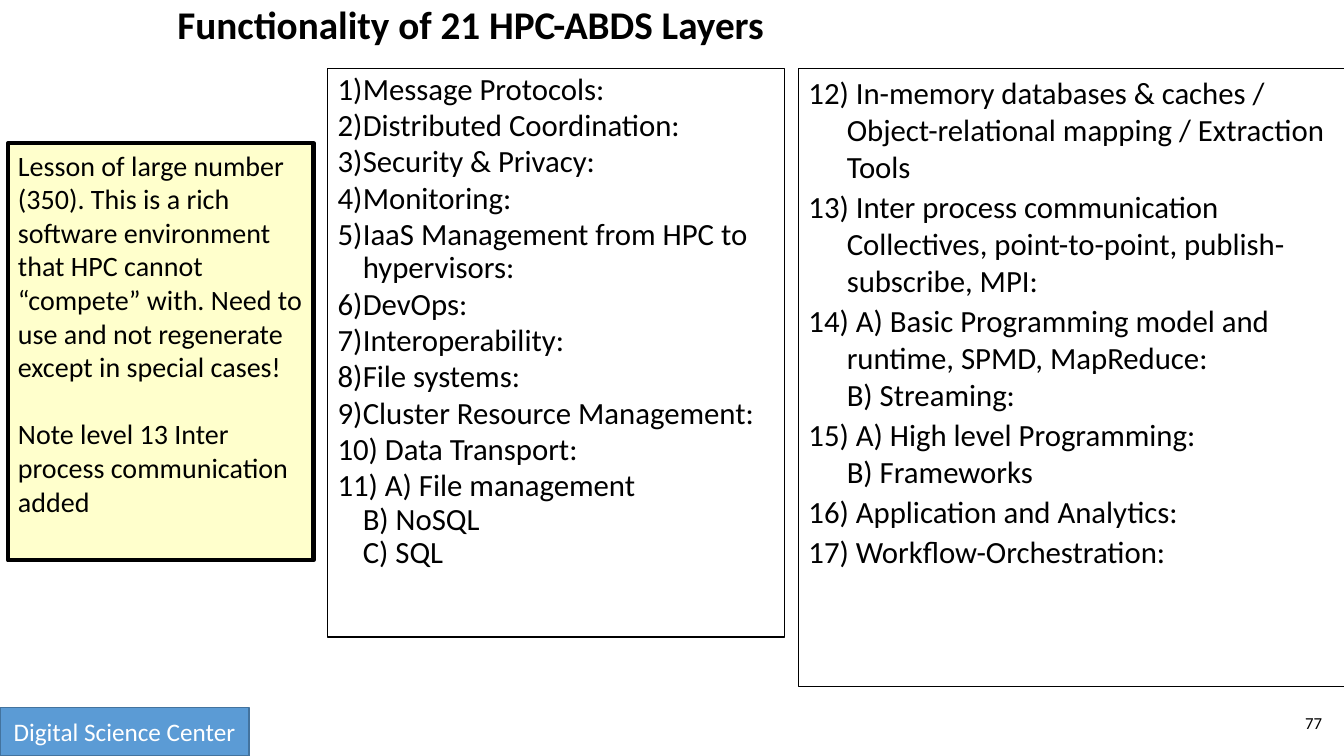
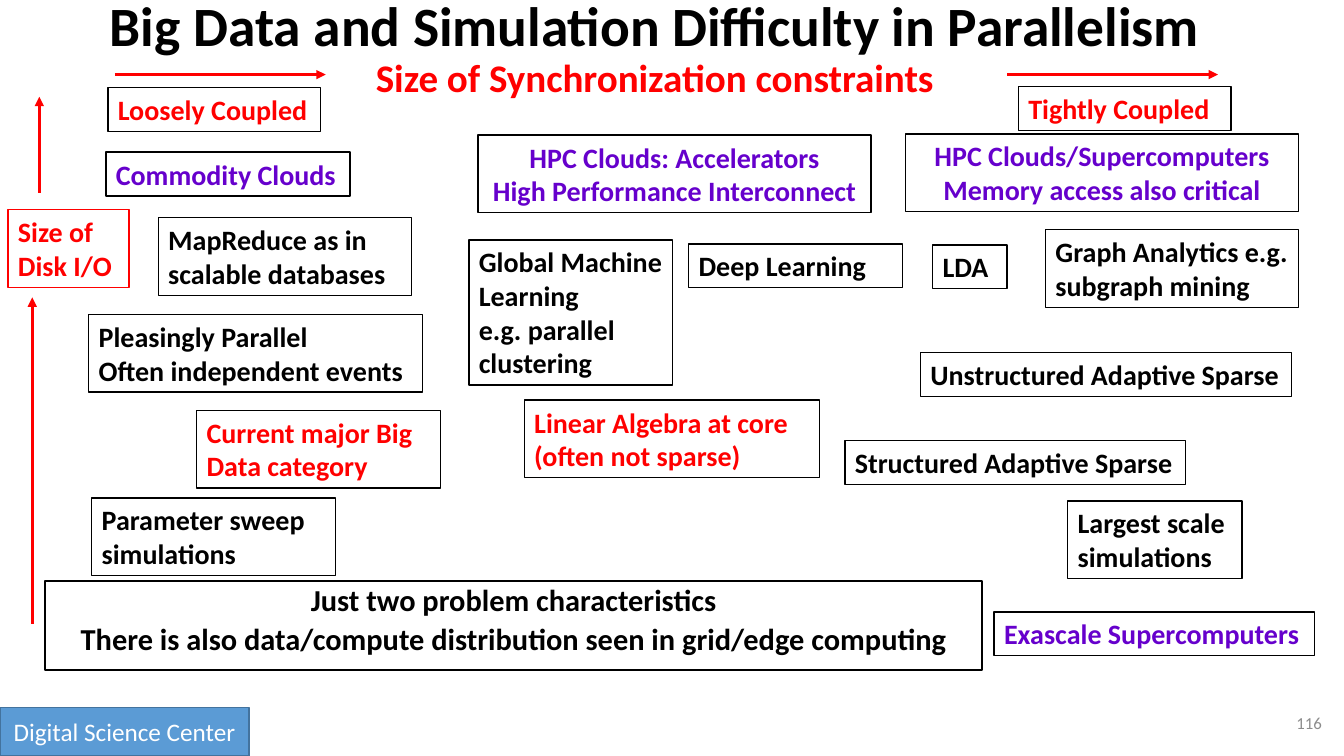
import pptx
import pptx.util
import pptx.dml.color
import pptx.enum.text
import pptx.enum.shapes
import pptx.oxml
import pptx.oxml.ns

Inches = pptx.util.Inches
Pt = pptx.util.Pt
PP_ALIGN = pptx.enum.text.PP_ALIGN
MSO_ANCHOR = pptx.enum.text.MSO_ANCHOR
BLACK, WHITE, RED, PURPLE = "000000", "FFFFFF", "FF0000", "6600CC"
BLUE, NAVY, CREAM, GRAY = "5B9BD5", "43739E", "FFFFCC", "8C8C8C"
FONT = "Calibri"
LEFT, CENTER, RIGHT = PP_ALIGN.LEFT, PP_ALIGN.CENTER, PP_ALIGN.RIGHT


def rgb(value):
    """Turn a hex string into a colour."""
    return pptx.dml.color.RGBColor.from_string(value)


def write(tf, text, size=20, color=BLACK, bold=False, align=LEFT,
          spacing=None, before=0, after=0, indent=0, start=None, add=False):
    """Write lines as paragraphs, numbered from start if it is given."""
    for i, line in enumerate(text.split("\n")):
        p = tf.add_paragraph() if add or i else tf.paragraphs[0]
        p.text = line
        p.alignment = align
        p.line_spacing = spacing
        p.space_before, p.space_after = Pt(before), Pt(after)
        for r in p.runs:
            r.font.name, r.font.size, r.font.bold = FONT, Pt(size), bold
            r.font.color.rgb = rgb(color)
        if start:
            pPr = p._p.get_or_add_pPr()
            pPr.set("marL", str(Inches(indent)))
            pPr.set("indent", str(-Inches(indent)))
            num = pptx.oxml.parse_xml(
                '<a:buAutoNum %s type="arabicParenR" startAt="%d"/>'
                % (pptx.oxml.ns.nsdecls("a"), start))
            pPr.append(num)


class Deck:
    """Hold the shared style and the current slide."""

    def __init__(self):
        """Start a wide presentation."""
        self.prs = pptx.Presentation()
        self.prs.slide_width, self.prs.slide_height = Inches(13.33), Inches(7.5)

    def slide(self, number, number_color=BLACK):
        """Add a slide with the centre's badge and a page number."""
        self.s = self.prs.slides.add_slide(self.prs.slide_layouts[5])
        tf = self.box(0, 7.02, 2.47, 0.48, fill=BLUE, line=NAVY,
                      anchor=MSO_ANCHOR.MIDDLE)
        write(tf, "Digital Science Center", size=18, color=WHITE, align=CENTER)
        sp = self.s.shapes.add_textbox(Inches(12.02), Inches(6.97),
                                       Inches(1.19), Inches(0.4))
        sp.text_frame.word_wrap = True
        sp.text_frame.vertical_anchor = MSO_ANCHOR.MIDDLE
        write(sp.text_frame, number, size=12, color=number_color, align=RIGHT)

    def title(self, text, x, y, w, h, size, align=LEFT):
        """Place and fill the title, returning its text frame."""
        sp = self.s.shapes.title
        sp.left, sp.top, sp.width, sp.height = map(Inches, (x, y, w, h))
        tf = sp.text_frame
        tf.auto_size = pptx.enum.text.MSO_AUTO_SIZE.NONE
        tf.vertical_anchor = MSO_ANCHOR.MIDDLE
        write(tf, text, size=size, bold=True, align=align, spacing=0.9)
        return tf

    def box(self, x, y, w, h, fill=None, line=BLACK, weight=1,
            anchor=MSO_ANCHOR.TOP):
        """Draw a rectangle and return its text frame."""
        sp = self.s.shapes.add_shape(pptx.enum.shapes.MSO_SHAPE.RECTANGLE,
                                     Inches(x), Inches(y), Inches(w), Inches(h))
        sp.shadow.inherit = False
        if fill:
            sp.fill.solid()
            sp.fill.fore_color.rgb = rgb(fill)
        else:
            sp.fill.background()
        sp.line.color.rgb = rgb(line)
        sp.line.width = Pt(weight)
        tf = sp.text_frame
        tf.word_wrap = True
        tf.vertical_anchor = anchor
        return tf

    def label(self, text, x, y, w, lines=1, color=BLACK, line=BLACK, align=LEFT):
        """Draw a bold label as high as its lines of text."""
        tf = self.box(x, y, w, 0.1 + 0.335 * lines, line=line)
        write(tf, text, color=color, bold=True, align=align)

    def arrow(self, x1, y1, x2, y2):
        """Draw a red arrow."""
        cxn = self.s.shapes.add_connector(
            pptx.enum.shapes.MSO_CONNECTOR.STRAIGHT,
            Inches(x1), Inches(y1), Inches(x2), Inches(y2))
        cxn.line.color.rgb = rgb(RED)
        cxn.line.width = Pt(2.25)
        ns = pptx.oxml.ns.nsdecls("a")
        cxn.line._get_or_add_ln().append(
            pptx.oxml.parse_xml('<a:tailEnd %s type="triangle"/>' % ns))
        cxn._element.spPr.append(pptx.oxml.parse_xml("<a:effectLst %s/>" % ns))


LAYERS_1 = """Message Protocols:
Distributed Coordination:
Security & Privacy:
Monitoring:
IaaS Management from HPC to hypervisors:
DevOps:
Interoperability:
File systems:
Cluster Resource Management:
 Data Transport:
 A) File management\vB) NoSQL\vC) SQL"""

LAYERS_12 = """ In-memory databases & caches / Object-relational mapping / Extraction Tools
 Inter process communication Collectives, point-to-point, publish-subscribe, MPI:
 A) Basic Programming model and runtime, SPMD, MapReduce:\vB) Streaming:
 A) High level Programming:\vB) Frameworks
 Application and Analytics:
 Workflow-Orchestration:"""

LESSON = ("Lesson of large number (350). This is a rich software environment "
          "that HPC cannot “compete” with. Need to use and not regenerate "
          "except in special cases!")

PROBLEMS = [
    ("Pleasingly Parallel\nOften independent events", 0.88, 3.12, 3.31, 2),
    ("MapReduce as in scalable databases", 1.57, 2.16, 2.51, 2),
    ("Parameter sweep simulations", 0.91, 4.94, 2.42, 2),
    ("Global Machine Learning\ne.g. parallel clustering", 4.65, 2.38, 2.02, 4),
    ("Deep Learning", 6.83, 2.42, 2.12, 1),
    ("LDA", 9.25, 2.43, 0.74, 1),
    ("Graph Analytics e.g. subgraph mining", 10.37, 2.28, 2.51, 2),
    ("Unstructured Adaptive Sparse", 9.13, 3.5, 3.68, 1),
    ("Structured Adaptive Sparse", 8.38, 4.37, 3.38, 1),
    ("Largest scale simulations", 10.59, 4.97, 1.73, 2),
]
REMARKS = [
    ("Loosely Coupled", 1.07, 0.87, 2.11, 1),
    ("Tightly Coupled", 10.1, 0.86, 2.11, 1),
    ("Current major Big Data category", 1.95, 4.07, 2.42, 2),
    ("Linear Algebra at core (often not sparse)", 5.2, 3.97, 2.93, 2),
]
MACHINES = [
    ("Commodity Clouds", 1.05, 1.51, 2.42, 1),
    ("Exascale Supercomputers", 9.86, 6.07, 3.18, 1),
]
HPC_CLOUDS = [
    ("HPC Clouds: Accelerators\nHigh Performance Interconnect", 4.74, 1.34, 3.9, 2),
    ("HPC Clouds/Supercomputers\nMemory access also critical", 8.98, 1.33, 3.9, 2),
]
ARROWS = [
    (1.14, 0.74, 3.23, 0.74),
    (9.99, 0.74, 12.08, 0.74),
    (0.32, 6.19, 0.32, 2.95),
    (0.39, 1.91, 0.39, 0.96),
]


def layers_slide(deck):
    """Build the list of software layers."""
    deck.slide("77")
    deck.title("Functionality of 21 HPC-ABDS Layers", 1.66, 0, 9.98, 0.54, 28)
    tf = deck.box(3.25, 0.68, 4.53, 5.64, weight=0.75)
    write(tf, LAYERS_1, size=22, spacing=0.9, before=2.2, indent=0.25, start=1)
    tf = deck.box(7.92, 0.68, 5.42, 6.13, weight=0.75)
    write(tf, LAYERS_12, size=22, before=2.2, indent=0.38, start=12)
    tf = deck.box(0.08, 1.42, 3.03, 4.14, fill=CREAM, weight=3)
    write(tf, LESSON, after=24)
    write(tf, "Note level 13 Inter process communication added", add=True)


def parallelism_slide(deck):
    """Build the map of problems by coupling and disk use."""
    deck.slide("116", GRAY)
    tf = deck.title("Big Data and Simulation Difficulty in Parallelism",
                    0.32, 0.09, 12.35, 0.81, 39.6, align=CENTER)
    write(tf, "Size of Synchronization constraints", size=27.9, color=RED,
          bold=True, align=CENTER, spacing=0.9, add=True)
    for ends in ARROWS:
        deck.arrow(*ends)
    for labels, color, align in ((PROBLEMS, BLACK, LEFT), (REMARKS, RED, LEFT),
                                 (MACHINES, PURPLE, LEFT),
                                 (HPC_CLOUDS, PURPLE, CENTER)):
        for label in labels:
            deck.label(*label, color=color, align=align)
    deck.label("Size of Disk I/O", 0.08, 2.08, 1.2, 2, color=RED, line=RED)
    tf = deck.box(0.45, 5.76, 9.29, 0.89, weight=1.5)
    tf.margin_top = tf.margin_bottom = Inches(0.1)
    write(tf, "Just two problem characteristics\nThere is also data/compute "
          "distribution seen in grid/edge computing", size=21.7, bold=True,
          align=CENTER, spacing=0.7, before=10)


def main():
    """Build and save the slides."""
    deck = Deck()
    layers_slide(deck)
    parallelism_slide(deck)
    deck.prs.save("out.pptx")


if __name__ == "__main__":
    main()
